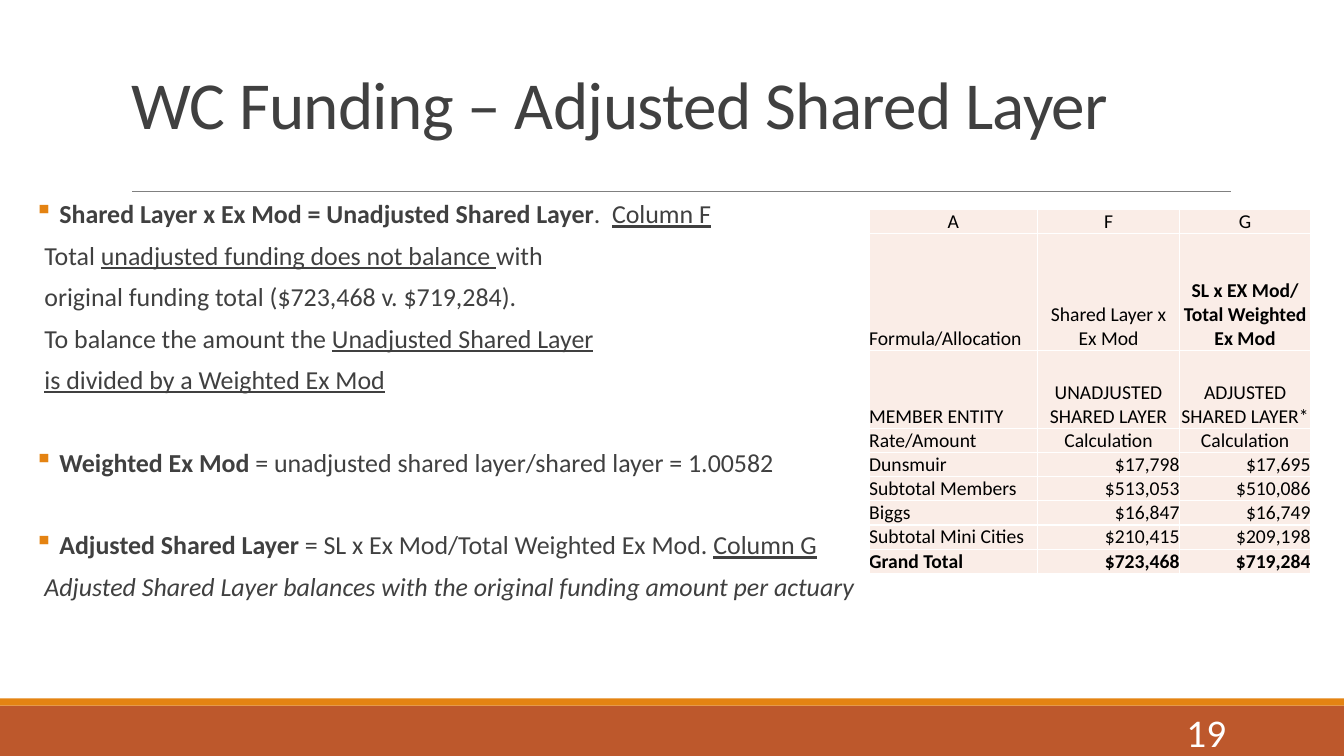
import dataclasses
import typing

import lxml.etree
import pptx
import pptx.dml.color
import pptx.enum.shapes
import pptx.enum.text
import pptx.oxml.ns
import pptx.util

Inches = pptx.util.Inches
Pt = pptx.util.Pt
Align = pptx.enum.text.PP_ALIGN
Anchor = pptx.enum.text.MSO_ANCHOR
qn = pptx.oxml.ns.qn


@dataclasses.dataclass(frozen=True)
class Theme:
    font: str = "Calibri"
    ink: str = "404040"
    black: str = "000000"
    white: str = "FFFFFF"
    rust: str = "BD582C"
    amber: str = "E48312"
    rule: str = "808080"
    cell: str = "FAEDE7"
    title: float = 48
    body: float = 18.5
    table: float = 14
    number: float = 28


@dataclasses.dataclass(frozen=True)
class Span:
    text: str
    bold: bool = False
    under: bool = False
    slant: bool = False


@dataclasses.dataclass(frozen=True)
class Line:
    spans: tuple[Span, ...]
    mark: bool = False
    before: float = 12


@dataclasses.dataclass(frozen=True)
class Band:
    top: float
    height: float
    color: str


THEME = Theme()
GAP = 41.5  # space before a new topic: one line more than usual

BANDS = (Band(7, 0.5, THEME.rust), Band(6.93, 0.07, THEME.amber))

LINES = (
    Line((Span(" "), Span("Shared Layer x Ex Mod = Unadjusted Shared Layer", bold=True),
          Span(".  "), Span("Column F", under=True)), mark=True),
    Line((Span("Total "), Span("unadjusted funding does not balance ", under=True),
          Span("with"))),
    Line((Span("original funding total ($723,468 v. $719,284)."),)),
    Line((Span("To balance the amount the "), Span("Unadjusted Shared Layer", under=True))),
    Line((Span("is divided by a Weighted Ex Mod", under=True),)),
    Line((Span(" Weighted Ex Mod ", bold=True),
          Span("= unadjusted shared layer/shared layer = 1.00582")), mark=True, before=GAP),
    Line((Span(" Adjusted Shared Layer ", bold=True),
          Span("= SL x Ex Mod/Total Weighted Ex Mod. "),
          Span("Column G", under=True)), mark=True, before=GAP),
    Line((Span("Adjusted Shared Layer balances with the original funding amount per actuary",
               slant=True),)),
)

ROWS = (
    ("A", "F", "G"),
    ("Formula/Allocation", "Shared Layer x\vEx Mod", "SL x EX Mod/\vTotal Weighted Ex Mod"),
    ("MEMBER ENTITY", "UNADJUSTED SHARED LAYER", "ADJUSTED SHARED LAYER*"),
    ("Rate/Amount", "Calculation", "Calculation"),
    ("Dunsmuir", "$17,798", "$17,695"),
    ("Subtotal Members", "$513,053", "$510,086"),
    ("Biggs", "$16,847", "$16,749"),
    ("Subtotal Mini Cities", "$210,415", "$209,198"),
    ("Grand Total", "$723,468", "$719,284"),
)
WIDTHS = (1.67, 1.41, 1.3)
TALL = {1: 1.16, 2: 0.77}
ROW = 0.24


def rgb(color: str) -> pptx.dml.color.RGBColor:
    return pptx.dml.color.RGBColor.from_string(color)


def style(run: typing.Any, size: float, color: str, bold: bool = False) -> None:
    run.font.name = THEME.font
    run.font.size = Pt(size)
    run.font.color.rgb = rgb(color)
    run.font.bold = bold


def draw_band(slide: typing.Any, band: Band) -> None:
    bar = slide.shapes.add_shape(pptx.enum.shapes.MSO_SHAPE.RECTANGLE, 0,
                                 Inches(band.top), Inches(13.33), Inches(band.height))
    bar.shadow.inherit = False
    bar.fill.solid()
    bar.fill.fore_color.rgb = rgb(band.color)
    bar.line.fill.background()


def draw_rule(slide: typing.Any) -> None:
    rule = slide.shapes.add_connector(pptx.enum.shapes.MSO_CONNECTOR.STRAIGHT,
                                      Inches(1.31), Inches(1.9), Inches(12.21), Inches(1.9))
    rule.line.color.rgb = rgb(THEME.rule)
    rule.line.width = Pt(0.5)
    lxml.etree.SubElement(rule._element.spPr, qn("a:effectLst"))


def draw_title(slide: typing.Any, text: str) -> None:
    title = slide.shapes.title
    title.left, title.top = Inches(1.2), Inches(0.31)
    title.width, title.height = Inches(11), Inches(1.16)
    frame = title.text_frame
    frame.text = text
    frame.auto_size = pptx.enum.text.MSO_AUTO_SIZE.NONE
    frame.vertical_anchor = Anchor.BOTTOM
    para = frame.paragraphs[0]
    para.alignment = Align.LEFT
    para.line_spacing = 0.85
    style(para.runs[0], THEME.title, THEME.ink)
    para.runs[0].font._element.set("spc", "-50")


def set_mark(para: typing.Any, mark: bool) -> None:
    props = para._p.get_or_add_pPr()
    props.set("marL", str(Inches(0.1)))
    props.set("indent", str(-Inches(0.1) if mark else 0))
    if mark:
        tint = lxml.etree.SubElement(props, qn("a:buClr"))
        lxml.etree.SubElement(tint, qn("a:srgbClr"), val=THEME.amber)
        lxml.etree.SubElement(props, qn("a:buChar"), char="▪")


def draw_body(slide: typing.Any, lines: tuple[Line, ...]) -> None:
    box = slide.shapes.add_textbox(Inches(0.34), Inches(2), Inches(11.12), Inches(4.2))
    frame = box.text_frame
    frame.word_wrap = True
    frame.margin_left = frame.margin_right = 0
    for i, line in enumerate(lines):
        para = frame.paragraphs[0] if i == 0 else frame.add_paragraph()
        para.line_spacing = 0.7
        para.space_before, para.space_after = Pt(line.before), Pt(2)
        set_mark(para, line.mark)
        for span in line.spans:
            run = para.add_run()
            run.text = span.text
            style(run, THEME.body, THEME.ink, span.bold)
            run.font.underline = span.under
            run.font.italic = span.slant


def set_edges(cell: typing.Any) -> None:
    props = cell._tc.get_or_add_tcPr()
    for i, side in enumerate(("lnL", "lnR", "lnT", "lnB")):
        edge = lxml.etree.Element(qn(f"a:{side}"), w=str(Pt(1)))
        fill = lxml.etree.SubElement(edge, qn("a:solidFill"))
        lxml.etree.SubElement(fill, qn("a:srgbClr"), val=THEME.white)
        props.insert(i, edge)


def draw_cell(cell: typing.Any, text: str, align: typing.Any, bold: bool) -> None:
    cell.fill.solid()
    cell.fill.fore_color.rgb = rgb(THEME.cell)
    cell.margin_left = cell.margin_right = cell.margin_top = cell.margin_bottom = 0
    cell.vertical_anchor = Anchor.BOTTOM
    cell.text_frame.text = text
    para = cell.text_frame.paragraphs[0]
    para.alignment = align
    for run in para.runs:
        style(run, THEME.table, THEME.black, bold)
    set_edges(cell)


def draw_table(slide: typing.Any) -> None:
    grid = slide.shapes.add_table(len(ROWS), len(WIDTHS), Inches(8.62), Inches(2.08),
                                  Inches(4.37), Inches(3.62)).table
    for c, width in enumerate(WIDTHS):
        grid.columns[c].width = Inches(width)
    for r, row in enumerate(ROWS):
        grid.rows[r].height = Inches(TALL.get(r, ROW))
        for c, text in enumerate(row):
            if c == 0 and r > 0:
                align = Align.LEFT
            else:
                align = Align.RIGHT if text.startswith("$") else Align.CENTER
            bold = r == len(ROWS) - 1 or (r, c) == (1, 2)
            draw_cell(grid.cell(r, c), text, align, bold)


def draw_number(slide: typing.Any, text: str) -> None:
    box = slide.shapes.add_textbox(Inches(10.83), Inches(7.06), Inches(1.43), Inches(0.4))
    frame = box.text_frame
    frame.word_wrap = True
    frame.vertical_anchor = Anchor.MIDDLE
    frame.text = text
    frame.paragraphs[0].alignment = Align.RIGHT
    style(frame.paragraphs[0].runs[0], THEME.number, THEME.white)


def main() -> None:
    deck = pptx.Presentation()
    deck.slide_width, deck.slide_height = Inches(13.33), Inches(7.5)
    slide = deck.slides.add_slide(deck.slide_layouts.get_by_name("Title Only"))
    # Frame of the page
    for band in BANDS:
        draw_band(slide, band)
    draw_rule(slide)
    # Content
    draw_title(slide, "WC Funding – Adjusted Shared Layer")
    draw_body(slide, LINES)
    draw_table(slide)
    draw_number(slide, "19")
    deck.save("out.pptx")


if __name__ == "__main__":
    main()
